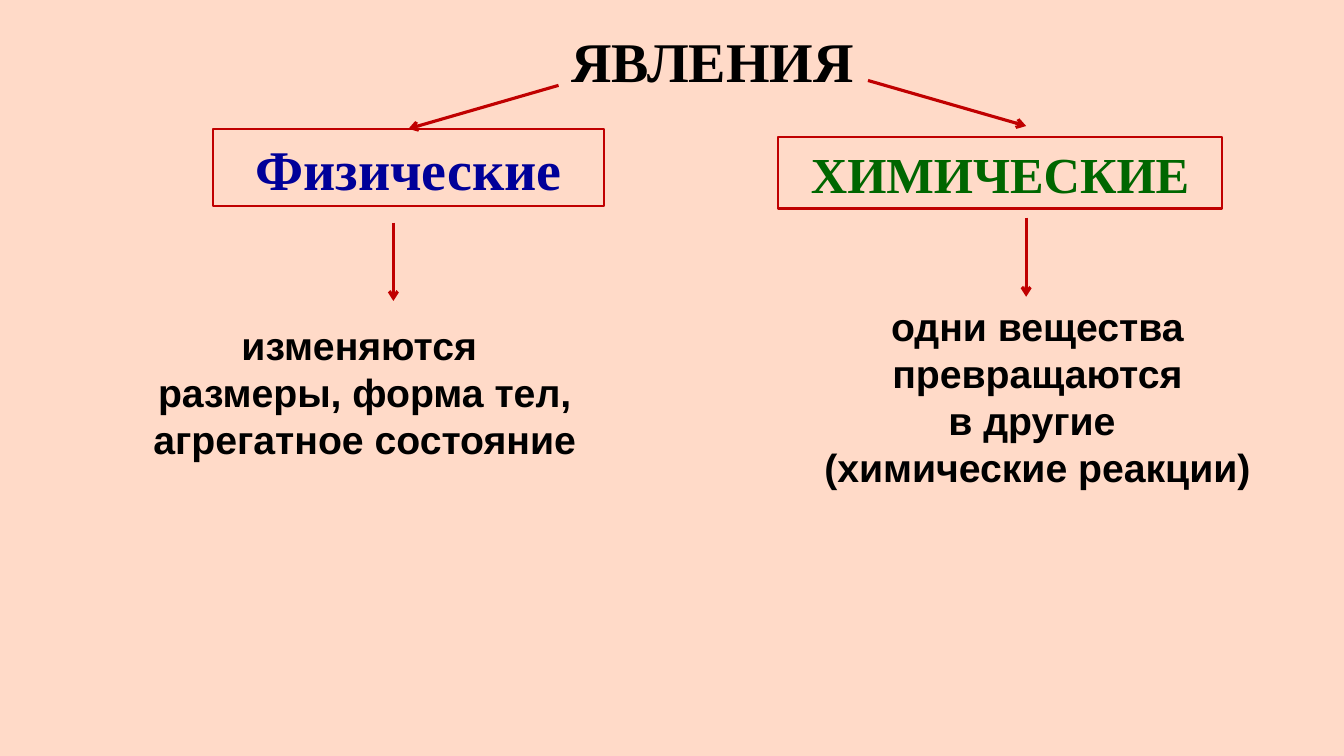
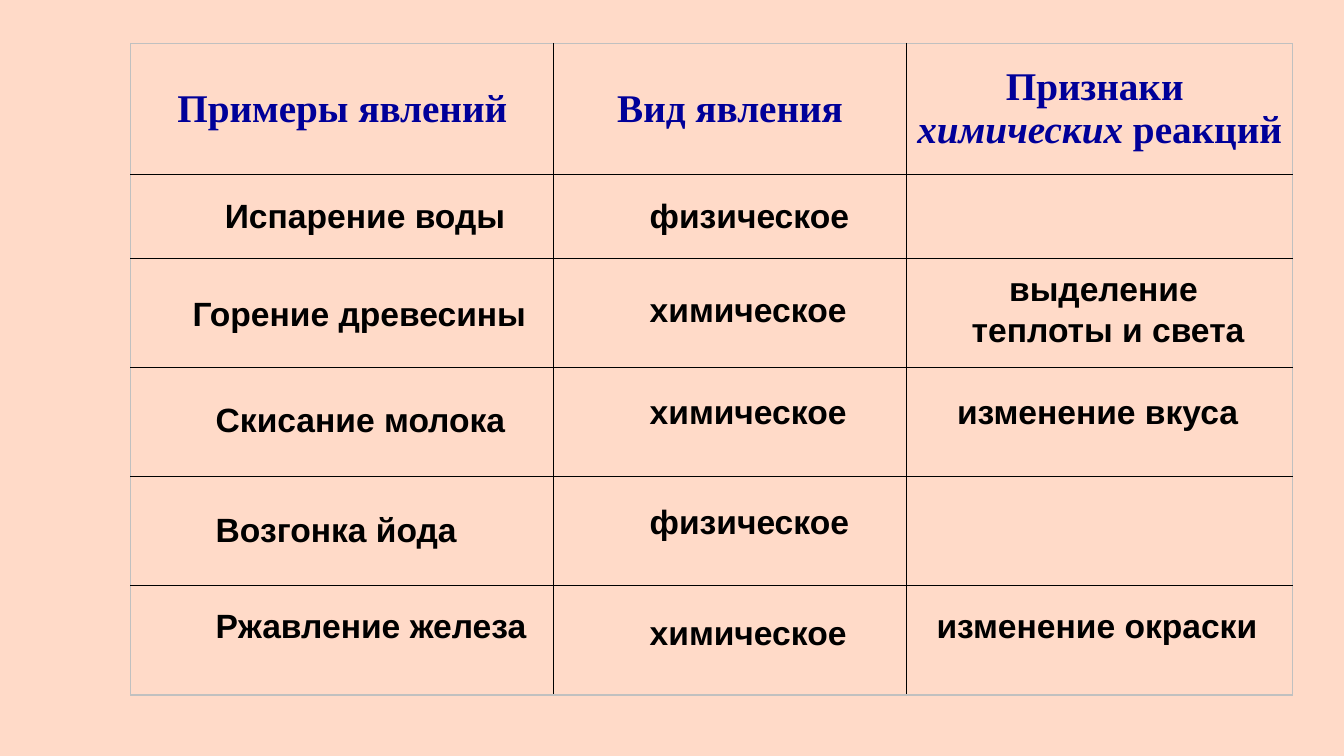
import pptx
import pptx.util
import pptx.dml.color
import pptx.enum.shapes
import pptx.enum.text
import pptx.oxml
import pptx.oxml.ns

Pt = pptx.util.Pt
Align = pptx.enum.text.PP_ALIGN
Anchor = pptx.enum.text.MSO_ANCHOR

COLORS = {
    "background": "FFDAC8",
    "accent": "C00000",
    "blue": "000099",
    "green": "006600",
    "black": "000000",
    "frame": "C0C0C0",
}
SERIF = "Times New Roman"
SANS = "Arial"

COLUMN_WIDTHS = [302, 252, 276]
ROW_HEIGHTS = [93.5, 60, 78, 78, 78, 78]
HEADERS = ["Примеры явлений", "Вид явления", "Признаки \n*химических *реакций"]

# Every answer: text, left, top, width
EXAMPLES = [
    ("Испарение воды", 153.5, 135.5, 217),
    ("Горение древесины", 130.5, 206, 255),
    ("Скисание молока", 147, 281.5, 223),
    ("Возгонка йода", 147, 360, 188),
    ("Ржавление железа", 147, 428.5, 238),
]
KINDS = [
    ("физическое", 457, 135.5, 158),
    ("химическое", 457, 202.5, 156),
    ("химическое", 457, 276, 156),
    ("физическое", 457, 354.5, 158),
    ("химическое", 457, 433.5, 156),
]
SIGNS = [
    ("выделение \nтеплоты и света", 686, 188, 211),
    ("изменение вкуса", 675.5, 276, 217),
    ("изменение окраски", 658, 428.5, 251),
]


def rgb(name):
    return pptx.dml.color.RGBColor.from_string(COLORS[name])


def write(frame, text, size=28, font=SANS, color="black", align=Align.CENTER):
    """Fill a text frame with bold text; *stars* mark italics."""
    for index, line in enumerate(text.split("\n")):
        paragraph = frame.add_paragraph() if index else frame.paragraphs[0]
        paragraph.alignment = align
        for part, words in enumerate(line.split("*")):
            if words:
                run = paragraph.add_run()
                run.text = words
                run.font.size = Pt(size)
                run.font.name = font
                run.font.bold = True
                run.font.italic = part % 2 == 1
                run.font.color.rgb = rgb(color)


def add_title(slide, text, left, top, width, height):
    title = slide.shapes.title
    title.left, title.top, title.width, title.height = map(Pt, (left, top, width, height))
    title.text_frame.auto_size = pptx.enum.text.MSO_AUTO_SIZE.NONE
    title.text_frame.vertical_anchor = Anchor.MIDDLE
    write(title.text_frame, text, size=40, font=SERIF)


def add_heading_box(slide, text, left, top, width, height, **text_format):
    box = slide.shapes.add_shape(pptx.enum.shapes.MSO_SHAPE.RECTANGLE,
                                 Pt(left), Pt(top), Pt(width), Pt(height))
    box.shadow.inherit = False
    box.fill.background()
    box.line.color.rgb = rgb("accent")
    box.line.width = Pt(1.5)
    box.text_frame.vertical_anchor = Anchor.MIDDLE
    write(box.text_frame, text, font=SERIF, **text_format)
    return box


def add_text(slide, text, left, top, width, height, wrap=True, **text_format):
    frame = slide.shapes.add_textbox(Pt(left), Pt(top), Pt(width), Pt(height)).text_frame
    frame.word_wrap = wrap
    write(frame, text, **text_format)


def add_arrow(slide, start, end):
    arrow = slide.shapes.add_connector(pptx.enum.shapes.MSO_CONNECTOR.STRAIGHT,
                                       *map(Pt, start + end))
    arrow.line.color.rgb = rgb("accent")
    arrow.line.width = Pt(2.25)
    namespace = pptx.oxml.ns.nsdecls("a")
    arrow.line._get_or_add_ln().append(
        pptx.oxml.parse_xml(f'<a:tailEnd {namespace} type="arrow"/>'))
    arrow._element.spPr.append(pptx.oxml.parse_xml(f"<a:effectLst {namespace}/>"))
    return arrow


def set_border(cell, side, color):
    cell._tc.get_or_add_tcPr().append(pptx.oxml.parse_xml(
        f'<a:ln{side} {pptx.oxml.ns.nsdecls("a")} w="{Pt(1)}"><a:solidFill>'
        f'<a:srgbClr val="{COLORS[color]}"/></a:solidFill></a:ln{side}>'))


def add_grid(slide, left, top):
    rows, columns = len(ROW_HEIGHTS), len(COLUMN_WIDTHS)
    grid = slide.shapes.add_table(rows, columns, Pt(left), Pt(top),
                                  Pt(sum(COLUMN_WIDTHS)), Pt(sum(ROW_HEIGHTS))).table
    grid.first_row = grid.horz_banding = False
    for column, width in zip(grid.columns, COLUMN_WIDTHS):
        column.width = Pt(width)
    for row, height in zip(grid.rows, ROW_HEIGHTS):
        row.height = Pt(height)
    for r in range(rows):
        for c in range(columns):
            cell = grid.cell(r, c)
            outer = {"L": c == 0, "R": c == columns - 1, "T": r == 0, "B": r == rows - 1}
            for side, is_outer in outer.items():
                set_border(cell, side, "frame" if is_outer else "black")
            cell.fill.background()
            cell.vertical_anchor = Anchor.MIDDLE
    for c, header in enumerate(HEADERS):
        write(grid.cell(0, c).text_frame, header, font=SERIF, color="blue")


def build_phenomena(slide):
    add_title(slide, "ЯВЛЕНИЯ", 394.5, 15, 229, 55.5)
    physical = add_heading_box(slide, "Физические", 152, 92, 279.5, 55.5,
                               size=40, color="blue")
    add_heading_box(slide, "ХИМИЧЕСКИЕ", 556, 98, 317, 51, size=36, color="green")

    # Branches from the title, then down to the definitions
    add_arrow(slide, (399, 61), (292, 92)).end_connect(physical, 0)
    add_arrow(slide, (620, 57.5), (733, 90))
    add_arrow(slide, (281, 159), (281, 215))
    add_arrow(slide, (733, 155.5), (733, 212))

    add_text(slide, "изменяются \nразмеры, форма тел, агрегатное состояние",
             90, 226, 341, 177)
    add_text(slide, "одни вещества\nпревращаются\nв другие \n(химические реакции)",
             539, 212.5, 404, 143.5)


def build_examples(slide):
    add_grid(slide, 93.5, 31)
    # Answers lie over the empty cells
    for answers, align in ((EXAMPLES, Align.LEFT), (KINDS, Align.LEFT), (SIGNS, Align.CENTER)):
        for text, left, top, width in answers:
            height = 36 + 29.5 * text.count("\n")
            add_text(slide, text, left, top, width, height, wrap=False, size=24, align=align)


def main():
    deck = pptx.Presentation()
    deck.slide_width, deck.slide_height = Pt(960), Pt(540)
    backdrop = deck.slide_master.background.fill
    backdrop.solid()
    backdrop.fore_color.rgb = rgb("background")
    title_only, blank = deck.slide_layouts[5], deck.slide_layouts[6]
    build_phenomena(deck.slides.add_slide(title_only))
    build_examples(deck.slides.add_slide(blank))
    deck.save("out.pptx")


if __name__ == "__main__":
    main()
